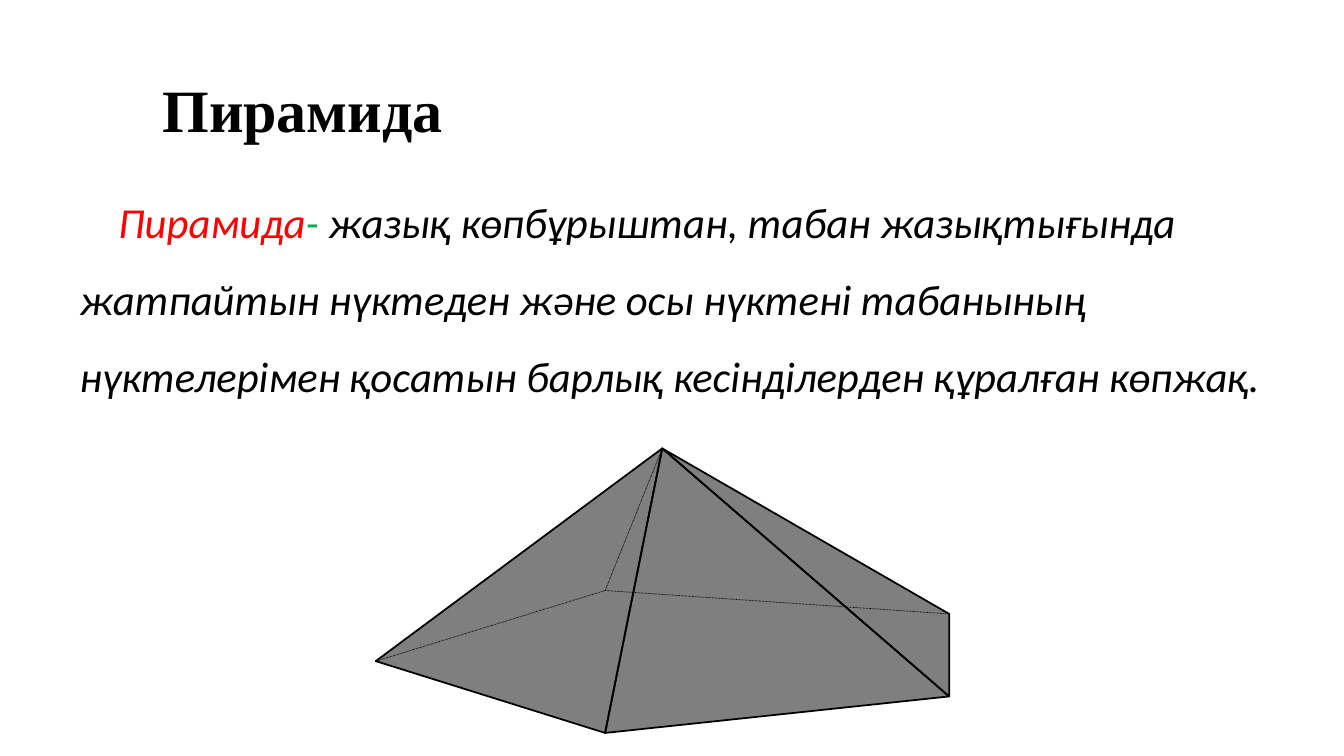
import pptx
import pptx.util
import pptx.dml.color
import pptx.enum.dml
import pptx.enum.shapes
import pptx.enum.text
import lxml.etree
from pptx.oxml.ns import qn

Cm, Pt = pptx.util.Cm, pptx.util.Pt
RGBColor = pptx.dml.color.RGBColor

BLACK = RGBColor(0x00, 0x00, 0x00)
RED = RGBColor(0xFF, 0x00, 0x00)
GREEN = RGBColor(0x00, 0xB0, 0x50)

TITLE = "Пирамида"
DEFINITION = [
    ("Пирамида", RED),
    ("- ", GREEN),
    ("жазық көпбұрыштан, табан жазықтығында жатпайтын нүктеден және осы нүктені "
     "табанының нүктелерімен қосатын барлық кесінділерден құралған көпжақ.", BLACK),
]

# Pyramid corners in centimetres
CORNERS = {
    "apex": (16.69, 11.3),
    "left": (9.47, 16.66),
    "front": (15.25, 18.47),
    "right": (23.92, 17.55),
    "right back": (23.92, 15.47),
    "back": (15.25, 14.88),
}
FACES = [("front", "apex", "left"), ("front", "right", "apex"),
         ("right", "right back", "apex")]
HIDDEN_EDGES = [("apex", "back"), ("back", "left"), ("back", "right back")]


def corner(name):
    x, y = CORNERS[name]
    return Cm(x), Cm(y)


def add_run(paragraph, text, font_name, size, color):
    run = paragraph.add_run()
    run.text = text
    run.font.name = font_name
    run.font.size = Pt(size)
    run.font.color.rgb = color
    return run


def add_title(slide):
    title = slide.shapes.title
    title.left, title.top, title.width, title.height = Cm(3.84), Cm(1.27), Cm(24.28), Cm(3.18)
    title.text_frame.vertical_anchor = pptx.enum.text.MSO_ANCHOR.MIDDLE
    paragraph = title.text_frame.paragraphs[0]
    paragraph.alignment = pptx.enum.text.PP_ALIGN.LEFT
    paragraph.line_spacing = 0.9
    add_run(paragraph, TITLE, "Times New Roman", 42.9, BLACK).font.bold = True


def add_definition(slide):
    box = slide.shapes.add_textbox(Cm(1.73), Cm(4.17), Cm(31.34), Cm(6.15))
    frame = box.text_frame
    frame.word_wrap = True
    frame.margin_left = frame.margin_right = Cm(0.28)
    paragraph = frame.paragraphs[0]
    paragraph.line_spacing = 1.5
    paragraph._p.get_or_add_pPr().set("indent", str(Cm(0.97)))
    for text, color in DEFINITION:
        add_run(paragraph, text, "Calibri", 30.5, color).font.italic = True


def add_face(group, names):
    start, *others = [corner(name) for name in names]
    builder = group.shapes.build_freeform(*start, scale=1.0)
    builder.add_line_segments(others, close=True)
    face = builder.convert_to_shape()
    face.shadow.inherit = False
    face.fill.solid()
    face.fill.fore_color.rgb = BLACK
    color = face._element.spPr.find(qn("a:solidFill"))[0]
    lxml.etree.SubElement(color, qn("a:alpha")).set("val", "50000")
    face.line.color.rgb = BLACK
    face.line.width = Pt(1.25)


def add_hidden_edge(group, start, end):
    edge = group.shapes.add_connector(
        pptx.enum.shapes.MSO_CONNECTOR.STRAIGHT, *corner(start), *corner(end))
    edge.line.color.rgb = BLACK
    edge.line.width = Pt(0.5)
    edge.line.dash_style = pptx.enum.dml.MSO_LINE.ROUND_DOT
    lxml.etree.SubElement(edge._element.spPr, qn("a:effectLst"))


def main():
    presentation = pptx.Presentation()
    presentation.slide_width, presentation.slide_height = Cm(33.87), Cm(19.05)
    slide = presentation.slides.add_slide(presentation.slide_layouts[5])
    add_title(slide)
    add_definition(slide)
    pyramid = slide.shapes.add_group_shape()
    for names in FACES:
        add_face(pyramid, names)
    for start, end in HIDDEN_EDGES:
        add_hidden_edge(pyramid, start, end)
    presentation.save("out.pptx")


if __name__ == "__main__":
    main()
